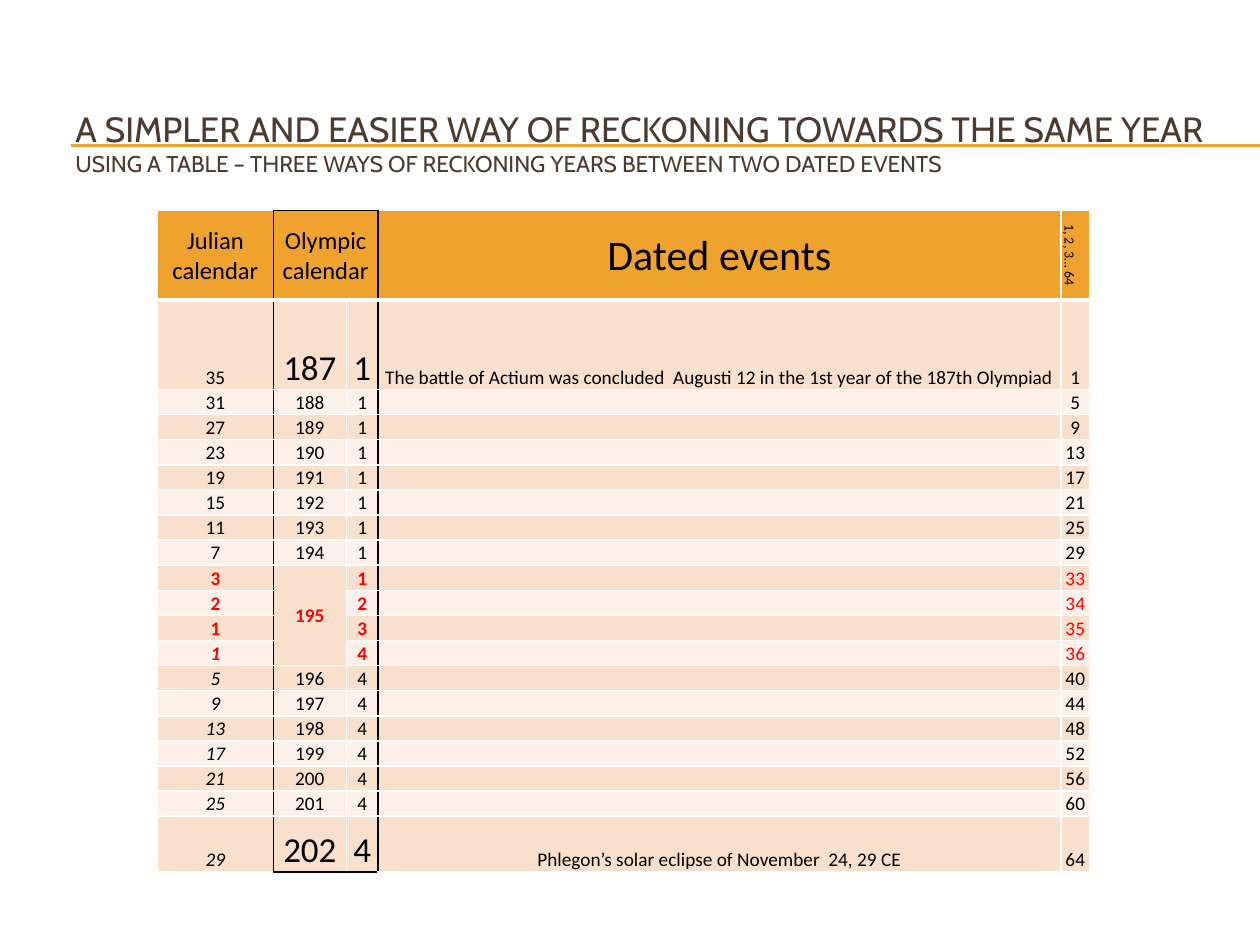
"""Build a slide that reckons the years between two dated events in a table."""
from lxml import etree
from pptx import Presentation
from pptx.dml.color import RGBColor
from pptx.enum import shapes, text
from pptx.oxml import ns
from pptx.util import Pt

HUES = {"gold": "F0A22E", "brown": "4E3B30", "black": "000000", "white": "FFFFFF",
        "red": "FF0000", "dark": "F9E0CD", "light": "FCF0E8"}
TITLE = [("A SIMPLER AND EASIER WAY OF RECKONING TOWARDS THE SAME YEAR", 20),
         ("USING A TABLE – THREE WAYS OF RECKONING YEARS BETWEEN TWO DATED EVENTS", 13)]
HEADS = [("Julian calendar", 14), ("Olympic calendar", 14), ("", 14),
         ("Dated events", 24), ("1, 2, 3… 64", 8)]
START = "The battle of Actium was concluded  Augusti 12 in the 1st year of the 187th Olympiad"
CLOSE = "Phlegon’s solar eclipse of November  24, 29 CE"
COLS = [66.2, 41.8, 18, 390.2, 16.6]
TALL, ROW, LAST = 51.2, 14.35, 32
TURN, ERA = range(9, 13), 12


def hue(name):
    """Return a named colour."""
    return RGBColor.from_string(HUES[name])


def style(font, face, size, color, bold=False, slant=False):
    """Format a font."""
    font.name, font.size = face, Pt(size)
    font.bold, font.italic = bold, slant
    font.color.rgb = hue(color)


def add_rule(slide, top):
    """Draw a thin gold line to the right edge."""
    line = slide.shapes.add_connector(
        shapes.MSO_CONNECTOR.STRAIGHT, Pt(40.5), Pt(top), Pt(720), Pt(top))
    line.line.color.rgb = hue("gold")
    line.line.width = Pt(0.75)
    etree.SubElement(line._element.spPr, ns.qn("a:effectLst"))


def add_title(slide):
    """Add the two-line title."""
    box = slide.shapes.add_textbox(Pt(36), Pt(48.2), Pt(684), Pt(66.2))
    frame = box.text_frame
    frame.word_wrap = True
    frame.vertical_anchor = text.MSO_ANCHOR.MIDDLE
    frame.text = "\v".join(line for line, _ in TITLE)
    for run, (_, size) in zip(frame.paragraphs[0].runs, TITLE):
        style(run.font, "Cabin", size, "brown")


def edge(cell, side, color, width=1):
    """Set one border of a cell."""
    line = etree.SubElement(cell._tc.get_or_add_tcPr(), ns.qn("a:ln" + side),
                            w=str(Pt(width)))
    fill = etree.SubElement(line, ns.qn("a:solidFill"))
    etree.SubElement(fill, ns.qn("a:srgbClr"), val=HUES[color])


def frame_cell(cell, row, col, last):
    """Border a cell, with a black outline around the Olympic columns."""
    inner = col in (1, 2)
    edge(cell, "L", "black" if col in (1, 3) else "white")
    edge(cell, "R", "black" if col in (0, 2) else "white")
    edge(cell, "T", "black" if inner and row == 0 else "white")
    edge(cell, "B", "black" if inner and row == last else "white", 1 if row else 3)


def fill_cell(cell, words, size, fill, color="black", bold=False, slant=False,
              anchor=text.MSO_ANCHOR.BOTTOM):
    """Write centred text in a filled cell."""
    cell.fill.solid()
    cell.fill.fore_color.rgb = hue(fill)
    cell.margin_left = cell.margin_right = cell.margin_top = Pt(0.72)
    cell.margin_bottom = Pt(0)
    cell.vertical_anchor = anchor
    cell.text_frame.text = words
    para = cell.text_frame.paragraphs[0]
    para.alignment = text.PP_ALIGN.CENTER
    for run in para.runs:
        style(run.font, "Calibri", size, color, bold, slant)
    if not words:
        para._p.get_or_add_endParaRPr().set("sz", str(size * 100))


def get_rows():
    """Work out Julian year, Olympiad, its year, event and count per row."""
    rows = [[35 - 4 * n, 187 + n, 1, "", 1 + 4 * n] for n in range(8)]
    rows += [[year, "" if n else 195, n + 1, "", 33 + n]
             for n, year in enumerate([3, 2, 1, 1])]
    rows += [[5 + 4 * n, 196 + n, 4, "", 40 + 4 * n] for n in range(7)]
    rows[0][3], rows[-1][3] = START, CLOSE
    return rows


def add_table(slide):
    """Add the table of years."""
    rows = get_rows()
    last = len(rows)
    highs = [TALL, TALL] + [ROW] * (last - 2) + [LAST]
    table = slide.shapes.add_table(last + 1, len(COLS), Pt(90), Pt(120.2),
                                   Pt(sum(COLS)), Pt(sum(highs))).table
    table.first_row = table.horz_banding = False
    for col, width in zip(table.columns, COLS):
        col.width = Pt(width)
    for row, high in zip(table.rows, highs):
        row.height = Pt(high)
    for r in range(last + 1):
        for c in range(len(COLS)):
            frame_cell(table.cell(r, c), r, c, last)
    for c, (words, size) in enumerate(HEADS):
        fill_cell(table.cell(0, c), words, size, "gold", anchor=text.MSO_ANCHOR.MIDDLE)
    table.cell(0, 4)._tc.tcPr.set("vert", "vert")
    for r, row in enumerate(rows, 1):
        for c, value in enumerate(row):
            size = 20 if r in (1, last) and c in (1, 2) else 11
            fill_cell(table.cell(r, c), str(value), size, "dark" if r % 2 else "light",
                      "red" if r in TURN else "black", r in TURN and c < 4,
                      r >= ERA and c == 0)
    table.cell(0, 1).merge(table.cell(0, 2))
    table.cell(TURN[0], 1).merge(table.cell(TURN[-1], 1))
    table.cell(TURN[0], 1).vertical_anchor = text.MSO_ANCHOR.MIDDLE


def main():
    """Build and save the slide."""
    deck = Presentation()
    deck.slide_width, deck.slide_height = Pt(720), Pt(540)
    slide = deck.slides.add_slide(deck.slide_layouts[6])
    for top in (82.8, 83.5):
        add_rule(slide, top)
    add_title(slide)
    add_table(slide)
    deck.save("out.pptx")


if __name__ == "__main__":
    main()
